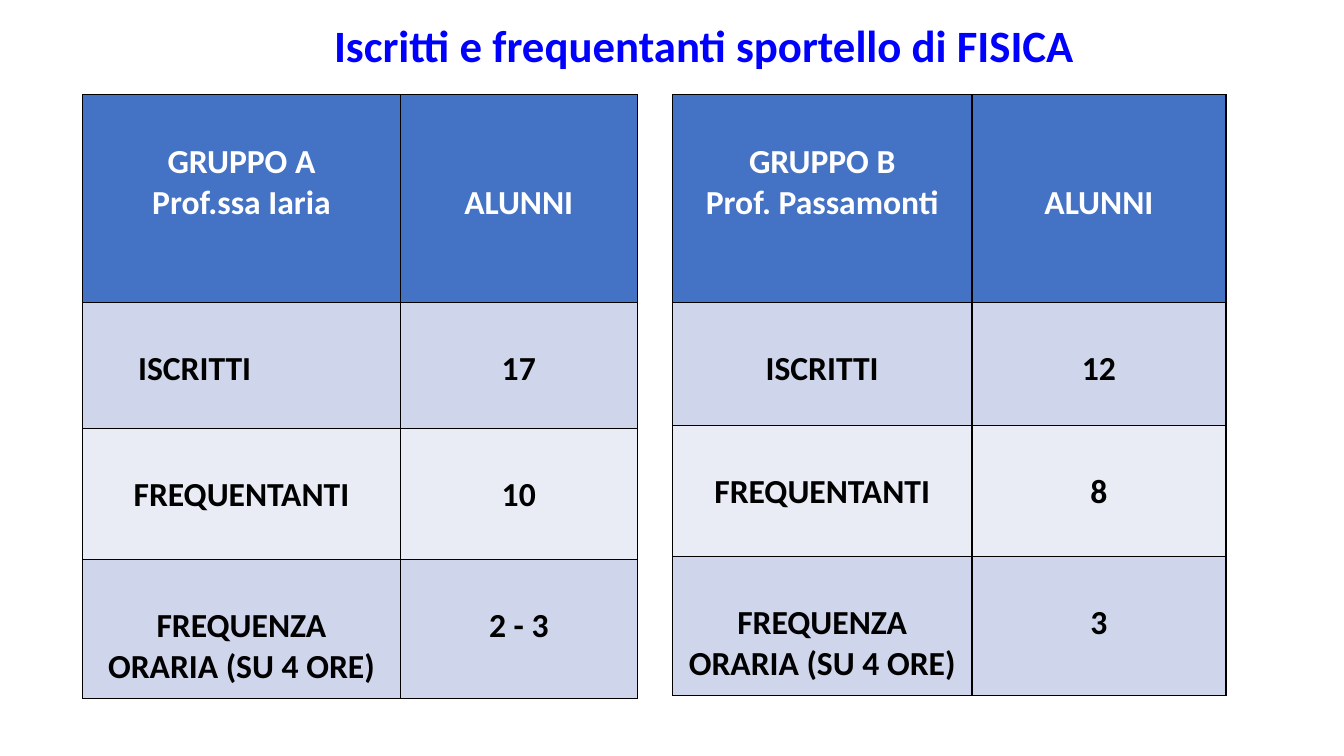
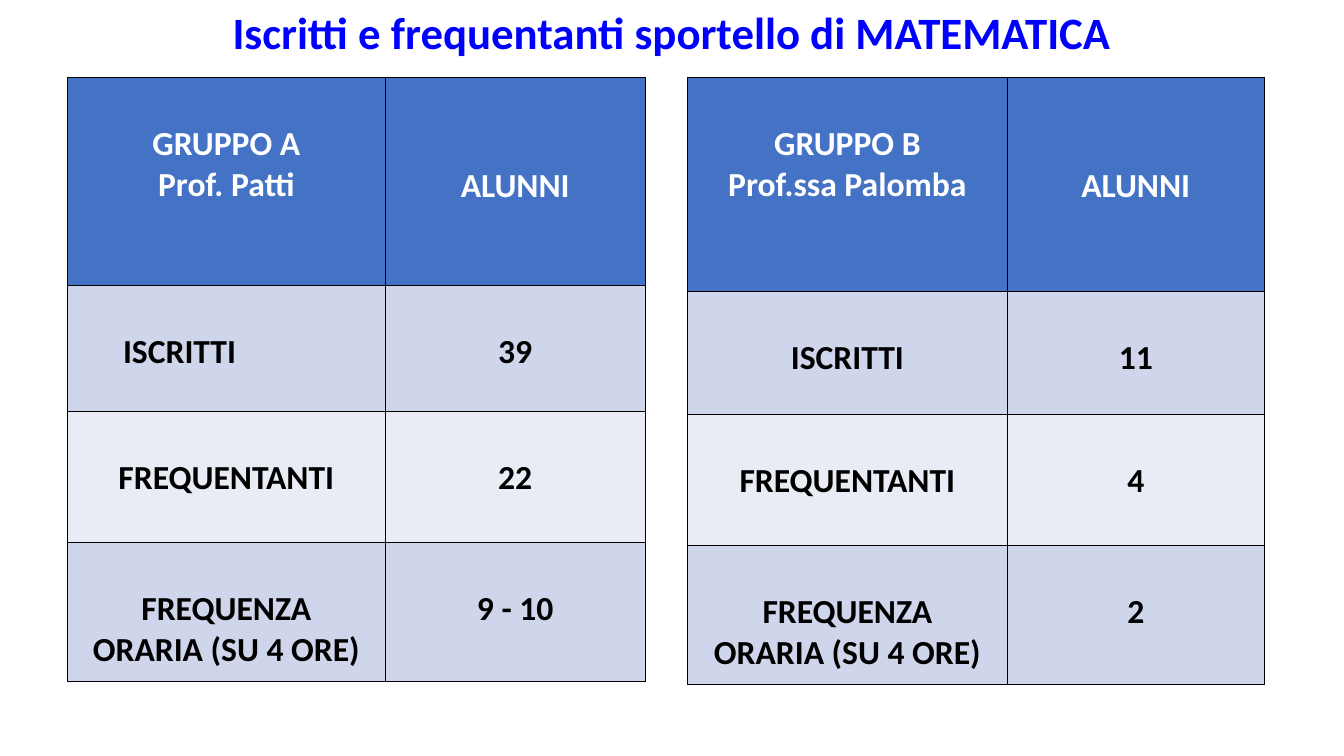
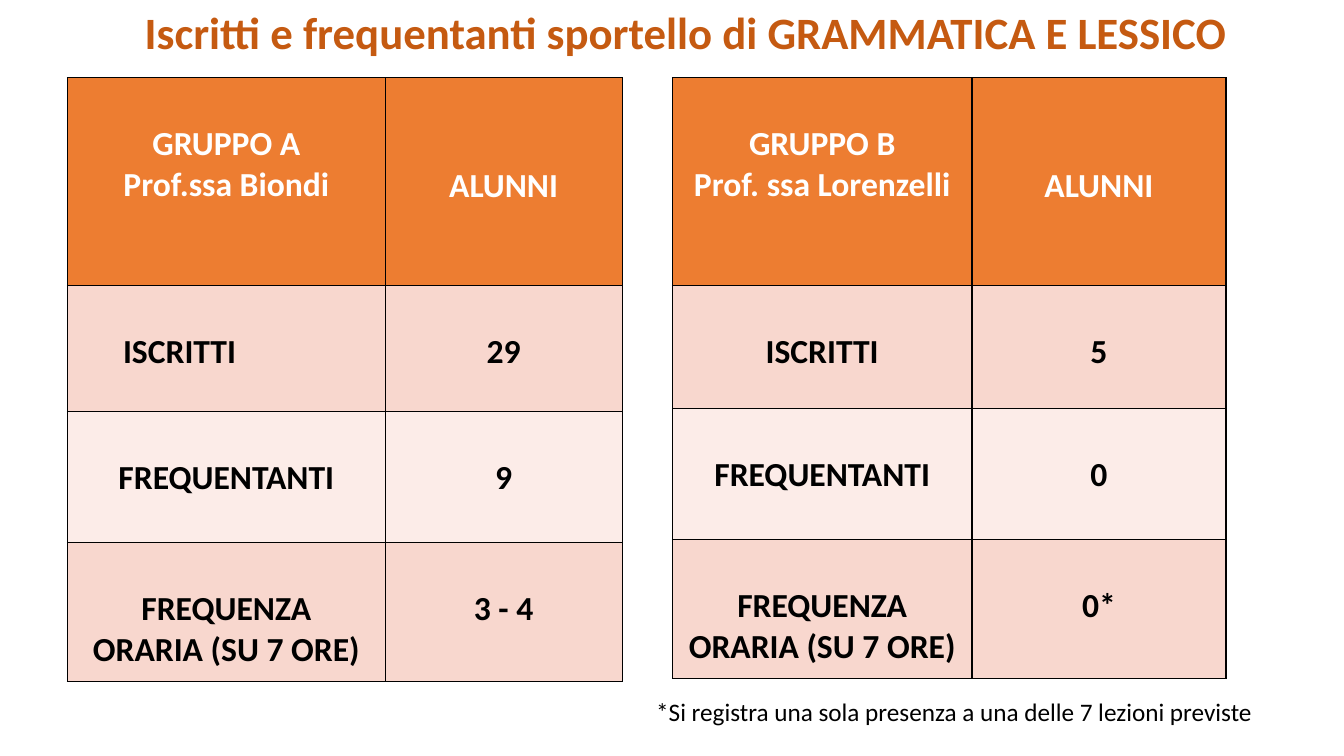
"""Builds three slides comparing enrolled and attending pupils per tutoring desk."""
from lxml import etree
from pptx import Presentation
from pptx.dml.color import RGBColor
from pptx.enum import text
from pptx.oxml import ns
from pptx.util import Inches, Pt

FONT = "Calibri"
BLACK, WHITE = "000000", "FFFFFF"
BLUE = dict(title="0000FF", head="4472C4", bands=("CFD5EA", "E9EBF5"))
ORANGE = dict(title="C55A11", head="ED7D31", bands=("F8D7CE", "FCECE8"))
LINE = 0.41
PAD = 0.05
ISCRITTI_INDENT = 0.55
ROWS_A = (2.06, 1.25, 1.3, 1.38)
ROWS_B = (2.06, 1.22, 1.3, 1.38)
ROWS_B_TALL = (2.12, 1.22, 1.3, 1.38)

SLIDES = [
    dict(subject="FISICA", theme=BLUE, title_at=(0.63, 0.13), top=0.94, hours=4, groups=[
        dict(name="A", teacher="Prof.ssa Iaria", left=0.82, cols=(3.15, 2.35), rows=ROWS_A,
             values=("17", "10", "2 - 3")),
        dict(name="B", teacher="Prof. Passamonti", left=6.67, cols=(2.97, 2.52), rows=ROWS_B,
             values=("12", "8", "3"))]),
    dict(subject="MATEMATICA", theme=BLUE, title_at=(0.31, 0), top=0.77, hours=4, groups=[
        dict(name="A", teacher="Prof. Patti", left=0.67, cols=(3.15, 2.58), rows=ROWS_A,
             values=("39", "22", "9 - 10")),
        dict(name="B", teacher="Prof.ssa Palomba", left=6.82, cols=(3.17, 2.55), rows=ROWS_B_TALL,
             values=("11", "4", "2"))]),
    dict(subject="GRAMMATICA E LESSICO", theme=ORANGE, title_at=(0.45, 0), top=0.77, hours=7,
         note="*Si registra una sola presenza a una delle 7 lezioni previste", groups=[
        dict(name="A", teacher="Prof.ssa Biondi", left=0.67, cols=(3.15, 2.35), rows=ROWS_A,
             values=("29", "9", "3 - 4")),
        dict(name="B", teacher="Prof. ssa Lorenzelli", left=6.67, cols=(2.97, 2.52), rows=ROWS_B,
             values=("5", "0", "0*"))]),
]


def rgb(value):
    return RGBColor.from_string(value)


def write(tf, content, size=24, color=BLACK, bold=True, align=text.PP_ALIGN.CENTER):
    tf.word_wrap = True
    for i, line in enumerate(content.split("\n")):
        p = tf.paragraphs[0] if i == 0 else tf.add_paragraph()
        p.alignment = align
        r = p.add_run()
        r.text = line
        r.font.name, r.font.size, r.font.bold = FONT, Pt(size), bold
        r.font.color.rgb = rgb(color)


def add_borders(cell):
    tc_pr = cell._tc.get_or_add_tcPr()
    for side in ("lnL", "lnR", "lnT", "lnB"):
        ln = etree.SubElement(tc_pr, ns.qn("a:" + side), w=str(Pt(1)))
        fill = etree.SubElement(ln, ns.qn("a:solidFill"))
        etree.SubElement(fill, ns.qn("a:srgbClr"), val=BLACK)


def add_group(s, group, top, hours, theme):
    labels = ("ISCRITTI", "FREQUENTANTI", f"FREQUENZA\nORARIA (SU {hours} ORE)")
    head = (f"GRUPPO {group['name']}\n{group['teacher']}", "ALUNNI")
    body = [head, *zip(labels, group["values"])]
    cols, rows = group["cols"], group["rows"]
    table = s.shapes.add_table(len(rows), len(cols), Inches(group["left"]), Inches(top),
                               Inches(sum(cols)), Inches(sum(rows))).table
    for c, width in enumerate(cols):
        table.columns[c].width = Inches(width)
    for r, height in enumerate(rows):
        table.rows[r].height = Inches(height)
        for c, content in enumerate(body[r]):
            cell = table.cell(r, c)
            lines_above = 2 if (r, c) == (0, 1) else 1
            cell.margin_top = Inches(PAD + lines_above * LINE)
            indented = group["name"] == "A" and (r, c) == (1, 0)
            if indented:
                cell.margin_left = Inches(ISCRITTI_INDENT)
            add_borders(cell)
            cell.fill.solid()
            cell.fill.fore_color.rgb = rgb(theme["bands"][(r - 1) % 2] if r else theme["head"])
            write(cell.text_frame, content, color=BLACK if r else WHITE,
                  align=text.PP_ALIGN.LEFT if indented else text.PP_ALIGN.CENTER)


def add_title(s, subject, at, color):
    sp = s.shapes.title
    sp.left, sp.top = map(Inches, at)
    sp.width, sp.height = Inches(12.71), Inches(0.64)
    tf = sp.text_frame
    tf.auto_size = text.MSO_AUTO_SIZE.NONE
    tf.vertical_anchor = text.MSO_ANCHOR.TOP
    write(tf, f"Iscritti e frequentanti sportello di {subject}", size=32, color=color)


def main():
    prs = Presentation()
    prs.slide_width, prs.slide_height = Inches(13.33), Inches(7.5)
    for slide in SLIDES:
        s = prs.slides.add_slide(prs.slide_layouts[5])
        add_title(s, slide["subject"], slide["title_at"], slide["theme"]["title"])
        for group in slide["groups"]:
            add_group(s, group, slide["top"], slide["hours"], slide["theme"])
        if "note" in slide:
            sp = s.shapes.add_textbox(Inches(6.41), Inches(6.86), Inches(6.37), Inches(0.4))
            write(sp.text_frame, slide["note"], size=18, bold=False, align=text.PP_ALIGN.LEFT)
    prs.save("out.pptx")


if __name__ == "__main__":
    main()
